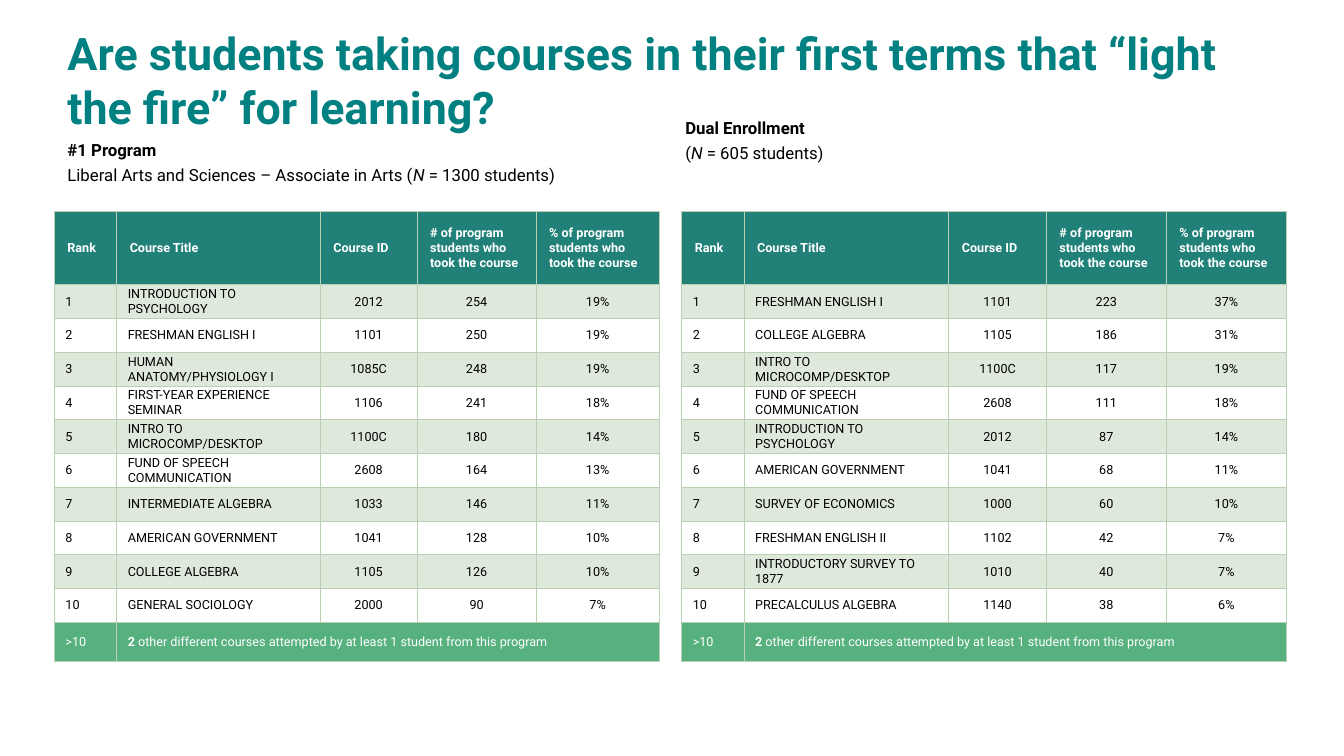
from lxml.etree import SubElement
from pptx import Presentation
from pptx.dml.color import RGBColor
from pptx.enum.text import MSO_ANCHOR as Anchor, MSO_AUTO_SIZE as AutoSize, PP_ALIGN as Align
from pptx.oxml.ns import qn
from pptx.util import Cm, Pt

TEAL, HEADER, BAND, FOOTER, BORDER = "008080", "218179", "DEE9DC", "56B17E", "B9D0B5"
WHITE, BLACK = "FFFFFF", "000000"
HEADINGS = ["Rank", "Course Title", "Course ID", "# of program students who took the course",
            "% of program students who took the course"]
OTHERS = [("2", {"bold": True}),
          (" other different courses attempted by at least 1 student from this program", {})]
PROGRAM = {
    "heading_box": (1.37, 3.15, 13.2, 2.46),
    "heading": "#1 Program",
    "lead": "Liberal Arts and Sciences – Associate in Arts (",
    "students": 1300,
    "table_left": 1.37,
    "widths": (1.57, 5.13, 2.44, 3.0, 3.1),
    "courses": [
        ("INTRODUCTION TO PSYCHOLOGY", "2012", 254, 19),
        ("FRESHMAN ENGLISH I", "1101", 250, 19),
        ("HUMAN ANATOMY/PHYSIOLOGY I", "1085C", 248, 19),
        ("FIRST-YEAR EXPERIENCE SEMINAR", "1106", 241, 18),
        ("INTRO TO MICROCOMP/DESKTOP", "1100C", 180, 14),
        ("FUND OF SPEECH COMMUNICATION", "2608", 164, 13),
        ("INTERMEDIATE ALGEBRA", "1033", 146, 11),
        ("AMERICAN GOVERNMENT", "1041", 128, 10),
        ("COLLEGE ALGEBRA", "1105", 126, 10),
        ("GENERAL SOCIOLOGY", "2000", 90, 7),
    ],
}
DUAL_ENROLLMENT = {
    "heading_box": (16.94, 2.59, 13.72, 3.18),
    "heading": "Dual Enrollment",
    "lead": "(",
    "students": 605,
    "table_left": 17.18,
    "widths": (1.57, 5.16, 2.46, 3.02, 3.03),
    "courses": [
        ("FRESHMAN ENGLISH I", "1101", 223, 37),
        ("COLLEGE ALGEBRA", "1105", 186, 31),
        ("INTRO TO MICROCOMP/DESKTOP", "1100C", 117, 19),
        ("FUND OF SPEECH COMMUNICATION", "2608", 111, 18),
        ("INTRODUCTION TO PSYCHOLOGY", "2012", 87, 14),
        ("AMERICAN GOVERNMENT", "1041", 68, 11),
        ("SURVEY OF ECONOMICS", "1000", 60, 10),
        ("FRESHMAN ENGLISH II", "1102", 42, 7),
        ("INTRODUCTORY SURVEY TO 1877", "1010", 40, 7),
        ("PRECALCULUS ALGEBRA", "1140", 38, 6),
    ],
}


def rgb(value):
    """Return the colour of a hex string."""
    return RGBColor.from_string(value)


def apply(target, **values):
    """Set each named attribute on the target."""
    for name, value in values.items():
        setattr(target, name, value)


def write(paragraph, runs, size, color, **layout):
    """Fill a paragraph with (text, format) runs."""
    apply(paragraph, **layout)
    for text, style in runs:
        run = paragraph.add_run()
        run.text = text
        font_values = {"name": "Roboto", "size": Pt(size), "bold": False, "italic": False}
        apply(run.font, **{**font_values, **style})
        run.font.color.rgb = rgb(color)


def margins(horizontal, vertical):
    """Return the four inner margins."""
    return {"margin_left": Cm(horizontal), "margin_right": Cm(horizontal),
            "margin_top": Cm(vertical), "margin_bottom": Cm(vertical)}


def add_title(slide, left, top, width, height):
    """Place the slide title in its box."""
    title = slide.shapes.title
    apply(title, left=Cm(left), top=Cm(top), width=Cm(width), height=Cm(height))
    frame = title.text_frame
    apply(frame, word_wrap=True, auto_size=AutoSize.NONE, vertical_anchor=Anchor.TOP,
          **margins(0.33, 0.33))
    question = "Are students taking courses in their first terms that “light the fire” for learning?"
    write(frame.paragraphs[0], [(question, {"bold": True})], 32, TEAL, alignment=Align.LEFT)


def add_heading(slide, group, left, top, width, height):
    """Place the name and size of a student group."""
    frame = slide.shapes.add_textbox(Cm(left), Cm(top), Cm(width), Cm(height)).text_frame
    apply(frame, word_wrap=True, **margins(0.33, 0.33))
    write(frame.paragraphs[0], [(group["heading"], {"bold": True})], 12, BLACK, line_spacing=1.08)
    size_runs = [(group["lead"], {}), ("N", {"italic": True}),
                 (f" = {group['students']} students)", {})]
    write(frame.add_paragraph(), size_runs, 12, BLACK, line_spacing=1.08,
          space_before=Pt(2.7), space_after=Pt(2.7))


def style_cell(cell, fill, inset):
    """Give a cell its borders, margins and fill."""
    properties = cell._tc.get_or_add_tcPr()
    for side in ("a:lnL", "a:lnR", "a:lnT", "a:lnB"):
        line = SubElement(properties, qn(side), w=str(Pt(0.75)))
        SubElement(SubElement(line, qn("a:solidFill")), qn("a:srgbClr"), val=BORDER)
    apply(cell, vertical_anchor=Anchor.MIDDLE, **margins(*inset))
    cell.fill.solid()
    cell.fill.fore_color.rgb = rgb(fill)


def add_courses(slide, group, left, top):
    """Place the ranked course table with its corner at left, top."""
    widths = group["widths"]
    heights = [1.85] + [0.85] * len(group["courses"]) + [1.0]
    table = slide.shapes.add_table(len(heights), len(widths), Cm(left), Cm(top),
                                   Cm(sum(widths)), Cm(sum(heights))).table
    apply(table, first_row=False, horz_banding=False)
    for column, width in zip(table.columns, widths):
        column.width = Cm(width)
    for row, height in zip(table.rows, heights):
        row.height = Cm(height)

    rows = [([[(heading, {"bold": True})] for heading in HEADINGS], HEADER, WHITE)]
    for rank, (course, code, count, share) in enumerate(group["courses"], 1):
        values = [rank, course, code, count, f"{share}%"]
        rows.append(([[(str(value), {})] for value in values], BAND if rank % 2 else WHITE, BLACK))
    rows.append(([[(">10", {})], OTHERS, [], [], []], FOOTER, WHITE))

    for row_index, (contents, fill, color) in enumerate(rows):
        inset = (0.28, 0) if row_index else (0.33, 0.33)
        for column_index, runs in enumerate(contents):
            cell = table.cell(row_index, column_index)
            style_cell(cell, fill, inset)
            centred = 0 < row_index < len(rows) - 1 and column_index > 1
            write(cell.text_frame.paragraphs[0], runs, 9, color,
                  alignment=Align.CENTER if centred else Align.LEFT)
    last = len(rows) - 1
    table.cell(last, 1).merge(table.cell(last, len(widths) - 1))


def main():
    """Build and save the slide."""
    deck = Presentation()
    apply(deck, slide_width=Cm(33.87), slide_height=Cm(19.05))
    slide = deck.slides.add_slide(deck.slide_layouts[5])
    add_title(slide, 1.37, 0.33, 31.14, 3.18)
    for group in (PROGRAM, DUAL_ENROLLMENT):
        add_courses(slide, group, group["table_left"], 5.33)
        add_heading(slide, group, *group["heading_box"])
    deck.save("out.pptx")


if __name__ == "__main__":
    main()
